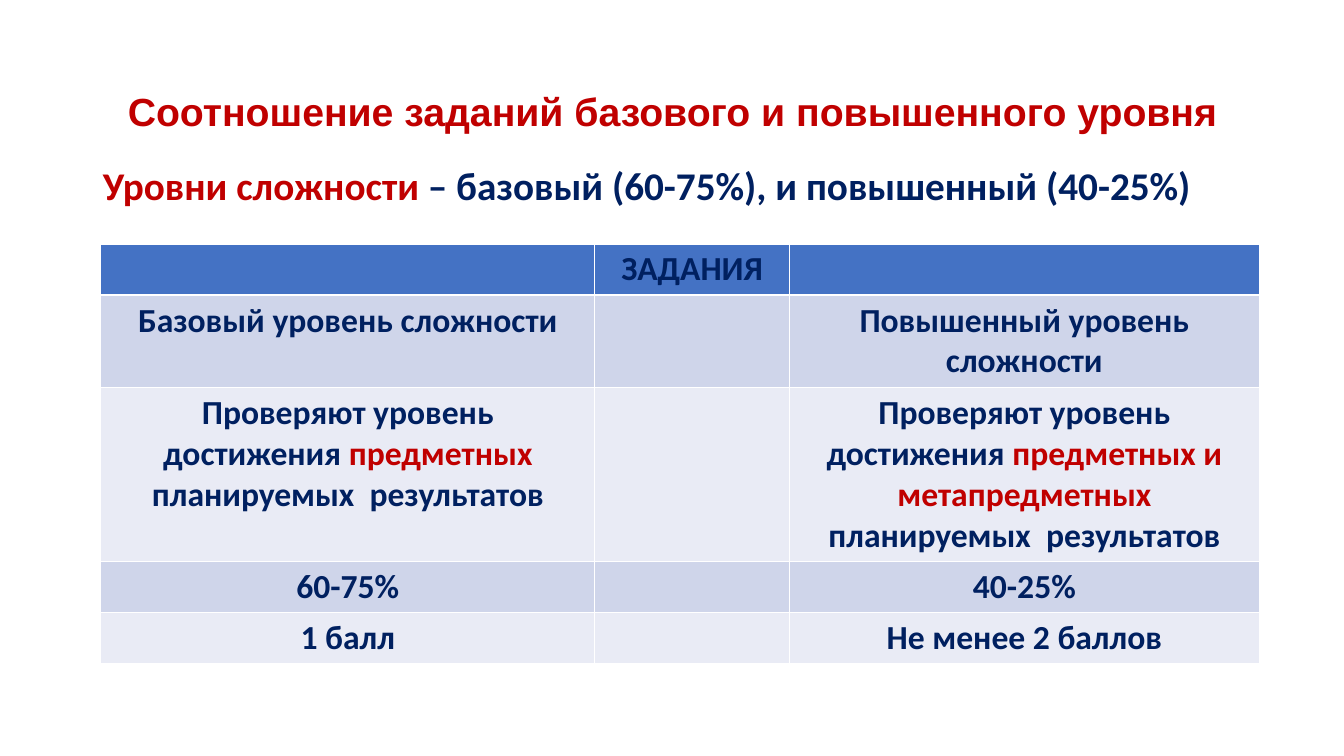
from typing import NamedTuple

from lxml import etree
from pptx import Presentation
from pptx.dml.color import RGBColor
from pptx.enum.text import MSO_ANCHOR, MSO_AUTO_SIZE, PP_ALIGN
from pptx.oxml.ns import qn
from pptx.util import Inches, Pt

CENTER, LEFT = PP_ALIGN.CENTER, PP_ALIGN.LEFT
TOP, MIDDLE = MSO_ANCHOR.TOP, MSO_ANCHOR.MIDDLE
NO_AUTOFIT = MSO_AUTO_SIZE.NONE

RED = RGBColor(0xC0, 0x00, 0x00)
NAVY = RGBColor(0x00, 0x20, 0x60)
HEADER_BLUE = RGBColor(0x44, 0x72, 0xC4)
BAND_DARK = RGBColor(0xCF, 0xD5, 0xEA)
BAND_LIGHT = RGBColor(0xE9, 0xEB, 0xF5)


class Run(NamedTuple):
    text: str
    color: RGBColor = NAVY


class Row(NamedTuple):
    height: float
    cells: tuple[list[Run], list[Run], list[Run]]


COLUMN_WIDTHS = (4.9, 1.93, 4.66)


def results(kind: str) -> list[Run]:
    return [Run("Проверяют уровень достижения "), Run(kind, RED),
            Run("планируемых  результатов")]


ROWS = [
    Row(0.5, ([], [Run("ЗАДАНИЯ")], [])),
    Row(0.91, ([Run("Базовый уровень сложности")], [],
               [Run("Повышенный уровень сложности")])),
    Row(1.73, (results("предметных "), [], results("предметных и метапредметных "))),
    Row(0.5, ([Run("60-75%")], [], [Run("40-25%")])),
    Row(0.5, ([Run("1 балл")], [], [Run("Не менее 2 баллов")])),
]


def set_attrs(obj, values: dict) -> None:
    for name, value in values.items():
        setattr(obj, name, value)


def write(p, runs: list[Run], size: int, align, font: str = "Calibri") -> None:
    p.alignment = align
    for run in runs:
        r = p.add_run()
        r.text = run.text
        set_attrs(r.font, {"name": font, "size": Pt(size), "bold": True})
        r.font.color.rgb = run.color


def fill_placeholder(sp, box: tuple, anchor, runs: list[Run], align, font: str):
    """Place a placeholder, write one 28 pt line in it and return the paragraph."""
    left, top, width, height = map(Inches, box)
    set_attrs(sp, {"left": left, "top": top, "width": width, "height": height})
    tf = sp.text_frame
    set_attrs(tf, {"word_wrap": True, "auto_size": NO_AUTOFIT, "vertical_anchor": anchor})
    p = tf.paragraphs[0]
    p.line_spacing = 0.9
    write(p, runs, 28, align, font)
    return p


def remove_bullet(p) -> None:
    pPr = p._p.get_or_add_pPr()
    pPr.set("marL", "0")
    pPr.set("indent", "0")
    etree.SubElement(pPr, qn("a:buNone"))


def add_levels_table(slide) -> None:
    height = sum(row.height for row in ROWS)
    frame = slide.shapes.add_table(len(ROWS), len(COLUMN_WIDTHS), Inches(1), Inches(2.42),
                                   Inches(sum(COLUMN_WIDTHS)), Inches(height))
    table = frame.table
    for column, width in zip(table.columns, COLUMN_WIDTHS):
        column.width = Inches(width)
    for i, row in enumerate(ROWS):
        table.rows[i].height = Inches(row.height)
        band = BAND_DARK if i % 2 else BAND_LIGHT
        for cell, runs in zip(table.rows[i].cells, row.cells):
            cell.fill.solid()
            cell.fill.fore_color.rgb = band if i else HEADER_BLUE
            write(cell.text_frame.paragraphs[0], runs, 24, CENTER)


def main() -> None:
    prs = Presentation()
    prs.slide_width, prs.slide_height = Inches(13.33), Inches(7.5)
    slide = prs.slides.add_slide(prs.slide_layouts[1])
    title, body = slide.placeholders
    fill_placeholder(title, (0.92, 0.4, 11.5, 1.45), MIDDLE,
                     [Run("Соотношение заданий базового и повышенного уровня", RED)],
                     CENTER, "Arial")
    p = fill_placeholder(body, (0.92, 1.6, 11.5, 5.01), TOP,
                         [Run("Уровни сложности ", RED),
                          Run("– базовый (60-75%), и повышенный (40-25%)")],
                         LEFT, "Calibri")
    p.space_before = Pt(10)
    remove_bullet(p)
    add_levels_table(slide)
    prs.save("out.pptx")


if __name__ == "__main__":
    main()
